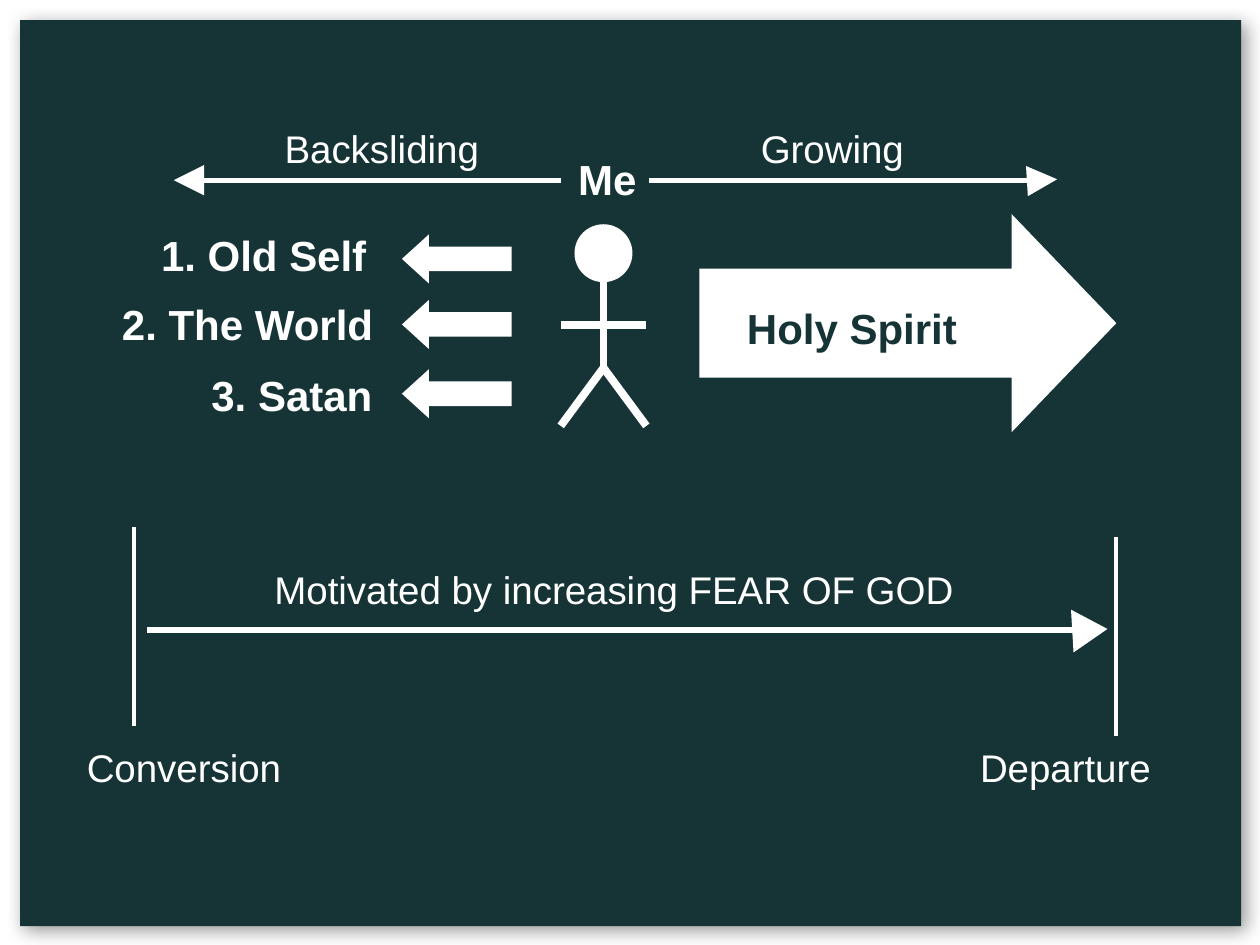
from dataclasses import dataclass

from lxml import etree
from pptx import Presentation
from pptx import util as u
from pptx.dml.color import RGBColor
from pptx.enum import shapes, text
from pptx.oxml.ns import qn


@dataclass(frozen=True)
class Theme:
    panel: RGBColor = RGBColor(0x16, 0x34, 0x36)
    ink: RGBColor = RGBColor(0xFF, 0xFF, 0xFF)
    font: str = "Arial"
    label_size: float = 22
    strong_size: float = 24
    thin: float = 2.25
    medium: float = 3
    thick: float = 4.5


THEME = Theme()
SHAPE = shapes.MSO_SHAPE


def add_solid(page, kind, left, top, width, height, color=THEME.ink, turn=0, adjust=()):
    solid = page.shapes.add_shape(
        kind, u.Inches(left), u.Inches(top), u.Inches(width), u.Inches(height))
    solid.shadow.inherit = False
    solid.fill.solid()
    solid.fill.fore_color.rgb = color
    solid.line.fill.background()
    solid.rotation = turn
    for index, value in enumerate(adjust):
        solid.adjustments[index] = value
    return solid


def add_line(page, x1, y1, x2, y2, weight):
    line = page.shapes.add_connector(
        shapes.MSO_CONNECTOR.STRAIGHT,
        u.Inches(x1), u.Inches(y1), u.Inches(x2), u.Inches(y2))
    line.line.color.rgb = THEME.ink
    line.line.width = u.Pt(weight)
    etree.SubElement(line._element.spPr, qn("a:effectLst"))


def add_text(page, words, left, top, width, size, bold=False, color=THEME.ink):
    box = page.shapes.add_textbox(
        u.Inches(left), u.Inches(top), u.Inches(width), u.Inches(0.5))
    frame = box.text_frame
    frame.word_wrap = True
    frame.margin_right = 0
    frame.vertical_anchor = text.MSO_ANCHOR.TOP
    para = frame.paragraphs[0]
    para.alignment = text.PP_ALIGN.LEFT
    span = para.add_run()
    span.text = words
    span.font.name = THEME.font
    span.font.size = u.Pt(size)
    span.font.bold = bold
    span.font.color.rgb = color


def add_label(page, words, left, top, width):
    add_text(page, words, left, top, width, THEME.label_size)


def add_strong(page, words, left, top, width, color=THEME.ink):
    add_text(page, words, left, top, width, THEME.strong_size, True, color)


def add_panel(page):
    """Dark backdrop with a soft shadow to the lower right."""
    panel = add_solid(page, SHAPE.RECTANGLE, 0.16, 0.16, 9.69, 7.19, THEME.panel)
    effects = panel._element.spPr.find(qn("a:effectLst"))
    shadow = etree.SubElement(
        effects, qn("a:outerShdw"), blurRad=str(u.Pt(11)), dist=str(u.Pt(4)),
        dir=str(45 * 60000), algn="tl", rotWithShape="0")
    tint = etree.SubElement(shadow, qn("a:srgbClr"), val="000000")
    etree.SubElement(tint, qn("a:alpha"), val="40000")


def add_stick_figure(page):
    center, hip, foot, reach = 4.79, 2.92, 3.38, 0.34
    add_solid(page, SHAPE.OVAL, center - 0.23, 1.78, 0.46, 0.46)
    add_line(page, center, 1.89, center, hip, THEME.thick)
    for side in (-reach, reach):
        add_line(page, center, hip, center + side, foot, THEME.thick)
    add_line(page, center - reach, 2.58, center + reach, 2.58, THEME.thick)


def add_forces(page):
    """Three pulls to the left against one strong push to the right."""
    pulls = (
        ("1. Old Self", 1.18, 1.77, 1.86),
        ("2. The World", 0.87, 2.32, 2.38),
        ("3. Satan", 1.58, 2.88, 2.93),
    )
    for words, left, text_top, arrow_top in pulls:
        add_solid(page, SHAPE.LEFT_ARROW, 3.19, arrow_top, 0.87, 0.39, adjust=(0.5, 0.55))
        add_strong(page, words, left, text_top, 3.11 - left)
    add_solid(page, SHAPE.RIGHT_ARROW, 5.55, 1.7, 3.31, 1.73, adjust=(0.5, 0.48))
    add_strong(page, "Holy Spirit", 5.83, 2.35, 1.93, THEME.panel)


def add_direction_axis(page):
    level = 1.43
    add_strong(page, "Me", 4.49, 1.17, 0.75)
    add_line(page, 1.42, level, 4.45, level, THEME.medium)
    add_line(page, 5.15, level, 8.31, level, THEME.medium)
    for left, turn in ((1.38, 270), (8.15, 86.6)):
        add_solid(page, SHAPE.ISOSCELES_TRIANGLE, left, level - 0.12, 0.24, 0.24, turn=turn)
    add_label(page, "Backsliding", 2.16, 0.94, 2.28)
    add_label(page, "Growing", 5.94, 0.94, 2.36)


def add_timeline(page):
    add_label(page, "Motivated by increasing FEAR OF GOD", 2.08, 4.44, 5.83)
    ends = (("Conversion", 0.59, 1.81, 1.06, 4.18), ("Departure", 7.68, 1.57, 8.86, 4.26))
    for words, left, width, x, top in ends:
        add_label(page, words, left, 5.86, width)
        add_line(page, x, top, x, top + 1.58, THEME.thin)
    add_line(page, 1.17, 5, 8.7, 5, THEME.medium)
    add_solid(page, SHAPE.ISOSCELES_TRIANGLE, 8.48, 4.86, 0.34, 0.28, turn=86.6)


def main():
    deck = Presentation()
    deck.slide_width, deck.slide_height = u.Inches(10), u.Inches(7.5)
    page = deck.slides.add_slide(deck.slide_layouts[6])
    add_panel(page)
    add_stick_figure(page)
    add_forces(page)
    add_timeline(page)
    add_direction_axis(page)
    deck.save("out.pptx")


if __name__ == "__main__":
    main()
